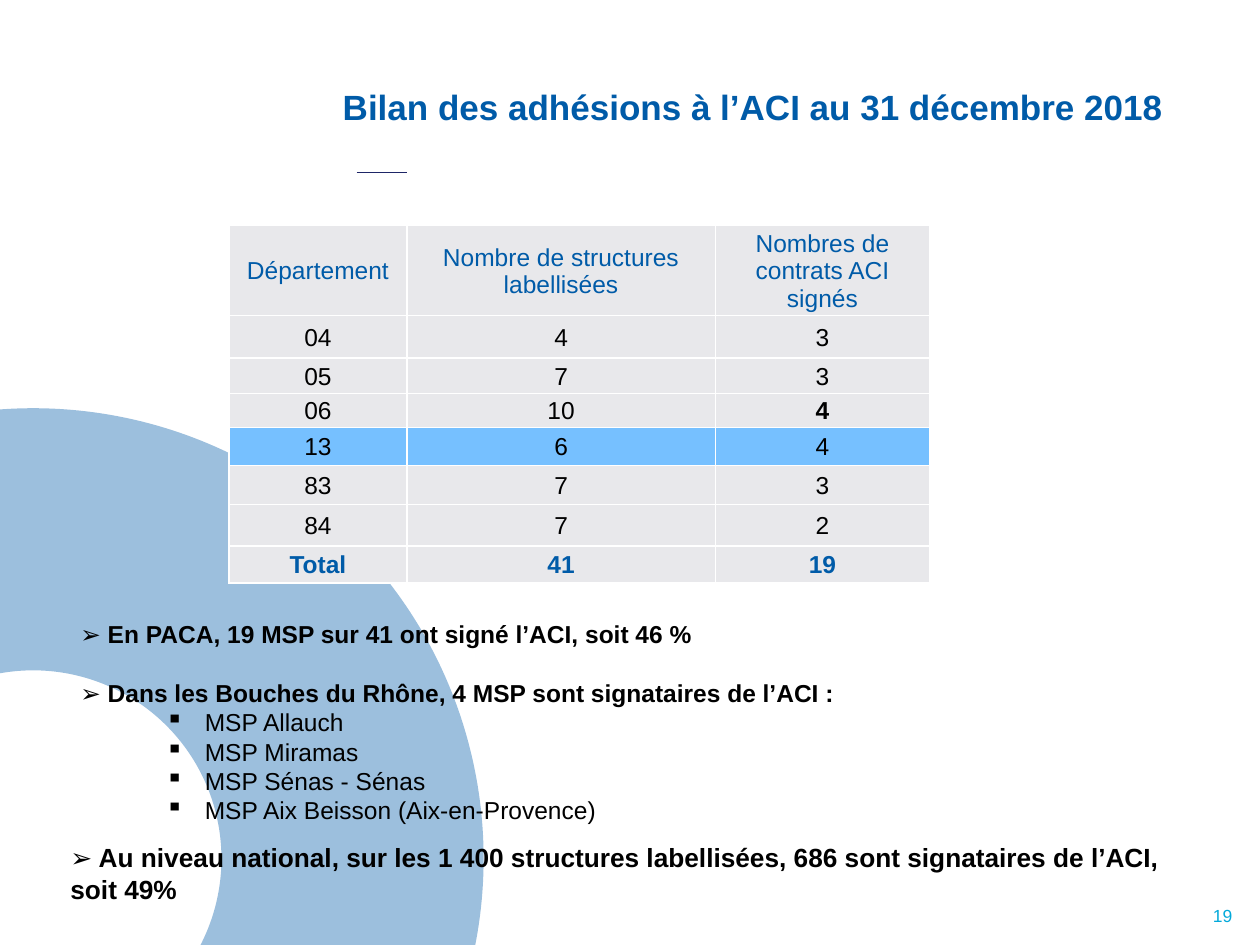
from lxml.etree import SubElement
from pptx import Presentation
from pptx.dml.color import RGBColor
from pptx.enum.shapes import MSO_CONNECTOR, MSO_SHAPE
from pptx.enum.text import MSO_ANCHOR, PP_ALIGN
from pptx.oxml.ns import qn
from pptx.util import Cm, Pt

BLUE = RGBColor(0x00, 0x5B, 0xA8)
NAVY = RGBColor(0x1E, 0x26, 0x67)
CYAN = RGBColor(0x03, 0xA9, 0xDA)
GREY = RGBColor(0xE8, 0xE8, 0xEB)
HIGHLIGHT = RGBColor(0x76, 0xC0, 0xFF)
WHITE = RGBColor(0xFF, 0xFF, 0xFF)
BLACK = RGBColor(0x00, 0x00, 0x00)

ROWS = [
    ("Département", "Nombre de structures labellisées", "Nombres de contrats ACI signés"),
    ("04", "4", "3"),
    ("05", "7", "3"),
    ("06", "10", "4"),
    ("13", "6", "4"),
    ("83", "7", "3"),
    ("84", "7", "2"),
    ("Total", "41", "19"),
]
COL_WIDTHS = [3.58, 6.22, 4.32]
ROW_HEIGHTS = [1.32, 0.86, 0.71, 0.69, 0.76, 0.79, 0.84, 0.74]
HIGHLIGHT_ROW = 4
BOLD_CELL = (3, 2)

CENTRES = ["MSP Allauch", "MSP Miramas", "MSP Sénas - Sénas", "MSP Aix Beisson (Aix-en-Provence)"]


class SlideBuilder:
    font = "Arial"

    def __init__(self, prs):
        self.s = prs.slides.add_slide(prs.slide_layouts[6])

    def style(self, p, size, color=BLACK, bold=False):
        for r in p.runs:
            r.font.name = self.font
            r.font.size = Pt(size)
            r.font.bold = bold
            r.font.color.rgb = color

    def bullet(self, p, char, left, hanging):
        pPr = p._p.get_or_add_pPr()
        pPr.set("marL", str(Cm(left)))
        pPr.set("indent", str(-Cm(hanging)))
        SubElement(pPr, qn("a:buChar"), char=char)

    def donut(self, x, y, size, ratio, color, opacity):
        sp = self.s.shapes.add_shape(MSO_SHAPE.DONUT, Cm(x), Cm(y), Cm(size), Cm(size))
        sp.adjustments[0] = ratio
        sp.shadow.inherit = False
        sp.line.fill.background()
        sp.fill.solid()
        sp.fill.fore_color.rgb = color
        clr = sp.fill._xPr.find(qn("a:solidFill"))[0]
        SubElement(clr, qn("a:alpha"), val=str(opacity * 1000))

    def rule(self, x1, x2, y, color):
        line = self.s.shapes.add_connector(MSO_CONNECTOR.STRAIGHT, Cm(x1), Cm(y), Cm(x2), Cm(y))
        line.line.color.rgb = color
        line.line.width = Pt(1)
        SubElement(line._element.spPr, qn("a:effectLst"))

    def text(self, x, y, w, h, lines, size, color=BLACK, bold=False,
             align=PP_ALIGN.LEFT, anchor=MSO_ANCHOR.TOP, inset=(0, 0)):
        sp = self.s.shapes.add_textbox(Cm(x), Cm(y), Cm(w), Cm(h))
        tf = sp.text_frame
        tf.word_wrap = True
        tf.vertical_anchor = anchor
        tf.margin_left = tf.margin_right = Cm(inset[0])
        tf.margin_top = tf.margin_bottom = Cm(inset[1])
        tf.text = "\n".join(lines)
        for p in tf.paragraphs:
            p.alignment = align
            self.style(p, size, color, bold)
        return tf

    def borders(self, cell, color):
        tcPr = cell._tc.get_or_add_tcPr()
        for side in ("lnL", "lnR", "lnT", "lnB"):
            ln = SubElement(tcPr, qn(f"a:{side}"), w=str(Pt(1)))
            SubElement(SubElement(ln, qn("a:solidFill")), qn("a:srgbClr"), val=str(color))

    def cell(self, cell, text, fill, color, bold):
        self.borders(cell, WHITE)
        cell.fill.solid()
        cell.fill.fore_color.rgb = fill
        cell.vertical_anchor = MSO_ANCHOR.MIDDLE
        cell.margin_left = cell.margin_right = cell.margin_top = Cm(0.03)
        cell.margin_bottom = 0
        cell.text_frame.text = text
        p = cell.text_frame.paragraphs[0]
        p.alignment = PP_ALIGN.CENTER
        self.style(p, 14, color, bold)

    def table(self, x, y):
        table = self.s.shapes.add_table(
            len(ROWS), len(COL_WIDTHS), Cm(x), Cm(y),
            Cm(sum(COL_WIDTHS)), Cm(sum(ROW_HEIGHTS))).table
        table.horz_banding = False
        for column, width in zip(table.columns, COL_WIDTHS):
            column.width = Cm(width)
        last = len(ROWS) - 1
        for i, values in enumerate(ROWS):
            table.rows[i].height = Cm(ROW_HEIGHTS[i])
            fill = HIGHLIGHT if i == HIGHLIGHT_ROW else GREY
            color = BLUE if i in (0, last) else BLACK
            for j, value in enumerate(values):
                bold = i == last or (i, j) == BOLD_CELL
                self.cell(table.cell(i, j), value, fill, color, bold)


def main():
    prs = Presentation()
    prs.slide_width, prs.slide_height = Cm(25.4), Cm(19.05)
    b = SlideBuilder(prs)

    b.donut(-8.41, 8.23, 18.16, 0.291, BLUE, 39)
    b.rule(7.19, 8.2, 3.48, NAVY)
    b.text(22.12, 18.24, 2.72, 0.81, ["19"], 10, CYAN, align=PP_ALIGN.RIGHT)
    title = b.text(6.91, 0.79, 17.83, 2.82, ["Bilan des adhésions à l’ACI au 31 décembre 2018"],
                   20, BLUE, bold=True, anchor=MSO_ANCHOR.MIDDLE)
    title.paragraphs[0].line_spacing = 0.9
    b.table(4.62, 4.55)

    findings = b.text(1.37, 12.34, 22.91, 5.05, [
        "➢ En PACA, 19 MSP sur 41 ont signé l’ACI, soit 46 %",
        "➢ Dans les Bouches du Rhône, 4 MSP sont signataires de l’ACI :",
        *CENTRES,
    ], 14, bold=True, align=PP_ALIGN.JUSTIFY, inset=(0.25, 0.13))
    findings.paragraphs[1].space_before = Pt(17)
    for p in findings.paragraphs[2:]:
        b.bullet(p, "▪", 2.51, 0.79)
        b.style(p, 14)

    b.text(1.42, 16.76, 23.65, 1.68, [
        "➢ Au niveau national, sur les 1 400 structures labellisées, 686 sont signataires de l’ACI,",
        "soit 49%",
    ], 15, bold=True, anchor=MSO_ANCHOR.MIDDLE)

    prs.save("out.pptx")


if __name__ == "__main__":
    main()
